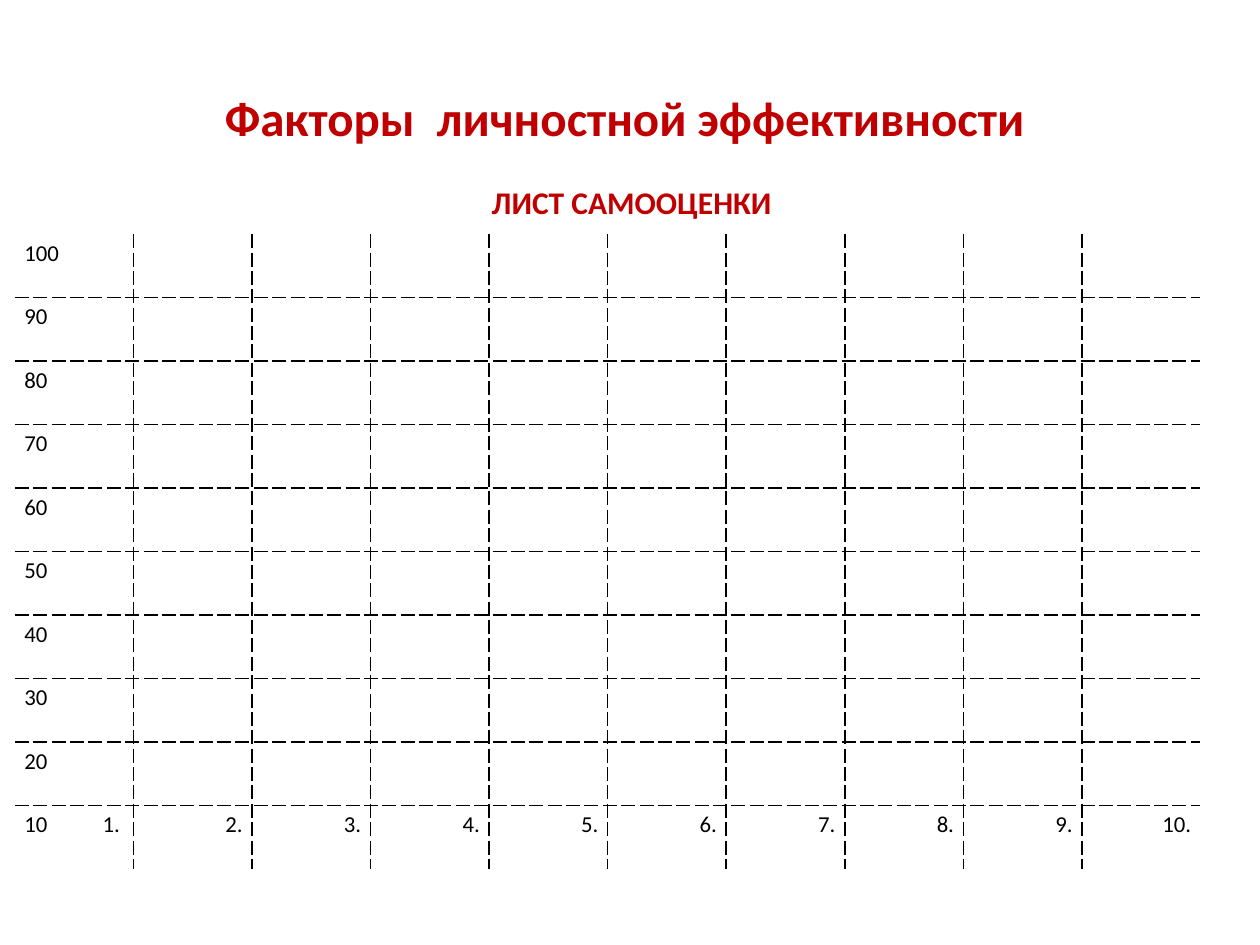
from dataclasses import dataclass

from lxml.etree import SubElement
from pptx import Presentation
from pptx.dml.color import RGBColor
from pptx.enum.text import MSO_ANCHOR as Anchor, PP_ALIGN as Align
from pptx.oxml.ns import qn
from pptx.util import Cm, Pt

RED, BLACK = "C00000", "000000"
COUNT = 10
COL, ROW = 2.39, 1.28
INSETS = {"margin_left": Cm(0.19), "margin_right": Cm(0.19),
          "margin_top": Cm(0.11), "margin_bottom": Cm(0.11)}


@dataclass
class Style:
    size: float
    color: str
    bold: bool = False
    align: Align = Align.LEFT


def paint(font, color: str) -> None:
    font.color.rgb = RGBColor.from_string(color)


def assign(target, values: dict) -> None:
    for name, value in values.items():
        setattr(target, name, value)


def write(frame, text: str, style: Style) -> None:
    line = frame.paragraphs[0]
    line.alignment = style.align
    run = line.add_run()
    run.text = text
    assign(run.font, {"name": "Calibri", "size": Pt(style.size), "bold": style.bold})
    paint(run.font, style.color)


def border(cell, side: str, shown: bool) -> None:
    props = cell._tc.get_or_add_tcPr()
    line = SubElement(props, qn(f"a:ln{side}"), w=str(Pt(1)))
    if shown:
        fill = SubElement(line, qn("a:solidFill"))
        SubElement(fill, qn("a:srgbClr"), val=BLACK)
        SubElement(line, qn("a:prstDash"), val="sysDash")
    else:
        SubElement(line, qn("a:noFill"))


def add_tab(line, stop: float) -> None:
    tabs = SubElement(line._p.get_or_add_pPr(), qn("a:tabLst"))
    SubElement(tabs, qn("a:tab"), pos=str(Cm(stop)), algn="l")


def label(row: int, col: int) -> str:
    score = str(100 - 10 * row) if col == 0 else ""
    factor = f"{col + 1}." if row == COUNT - 1 else ""
    return "\t".join(part for part in (score, factor) if part)


def draw_grid(slide) -> None:
    table = slide.shapes.add_table(COUNT, COUNT, Cm(0.3), Cm(4.72),
                                   Cm(COL * COUNT), Cm(ROW * COUNT)).table
    assign(table, {"first_row": False, "horz_banding": False})
    for col in table.columns:
        col.width = Cm(COL)
    for row in table.rows:
        row.height = Cm(ROW)
    last = COUNT - 1
    for r in range(COUNT):
        for c in range(COUNT):
            cell = table.cell(r, c)
            assign(cell, INSETS)
            # Only the inner grid lines are drawn
            inner = {"L": c > 0, "R": c < last, "T": r > 0, "B": r < last}
            for side, shown in inner.items():
                border(cell, side, shown)
            cell.fill.background()
            text = label(r, c)
            if text:
                align = Align.RIGHT if c else Align.LEFT
                write(cell.text_frame, text, Style(13, BLACK, align=align))
    # The corner cell holds both a score and a factor number
    add_tab(table.cell(last, 0).text_frame.paragraphs[0], 1.58)


def main() -> None:
    deck = Presentation()
    assign(deck, {"slide_width": Cm(25.4), "slide_height": Cm(19.05)})
    slide = deck.slides.add_slide(deck.slide_layouts[5])

    # Subtitle
    box = slide.shapes.add_textbox(Cm(4.29), Cm(2.92), Cm(16.89), Cm(2.49))
    assign(box.text_frame, {**INSETS, "margin_top": Cm(0.88), "word_wrap": True})
    write(box.text_frame, "ЛИСТ САМООЦЕНКИ", Style(18, RED, True, Align.CENTER))

    # Self-rating grid
    draw_grid(slide)

    # Title
    title = slide.shapes.title
    assign(title, {"left": Cm(1.27), "top": Cm(0.76),
                   "width": Cm(22.86), "height": Cm(3.18)})
    title.text_frame.vertical_anchor = Anchor.MIDDLE
    write(title.text_frame, "Факторы  личностной эффективности ",
          Style(28, RED, True, Align.CENTER))

    deck.save("out.pptx")


if __name__ == "__main__":
    main()
